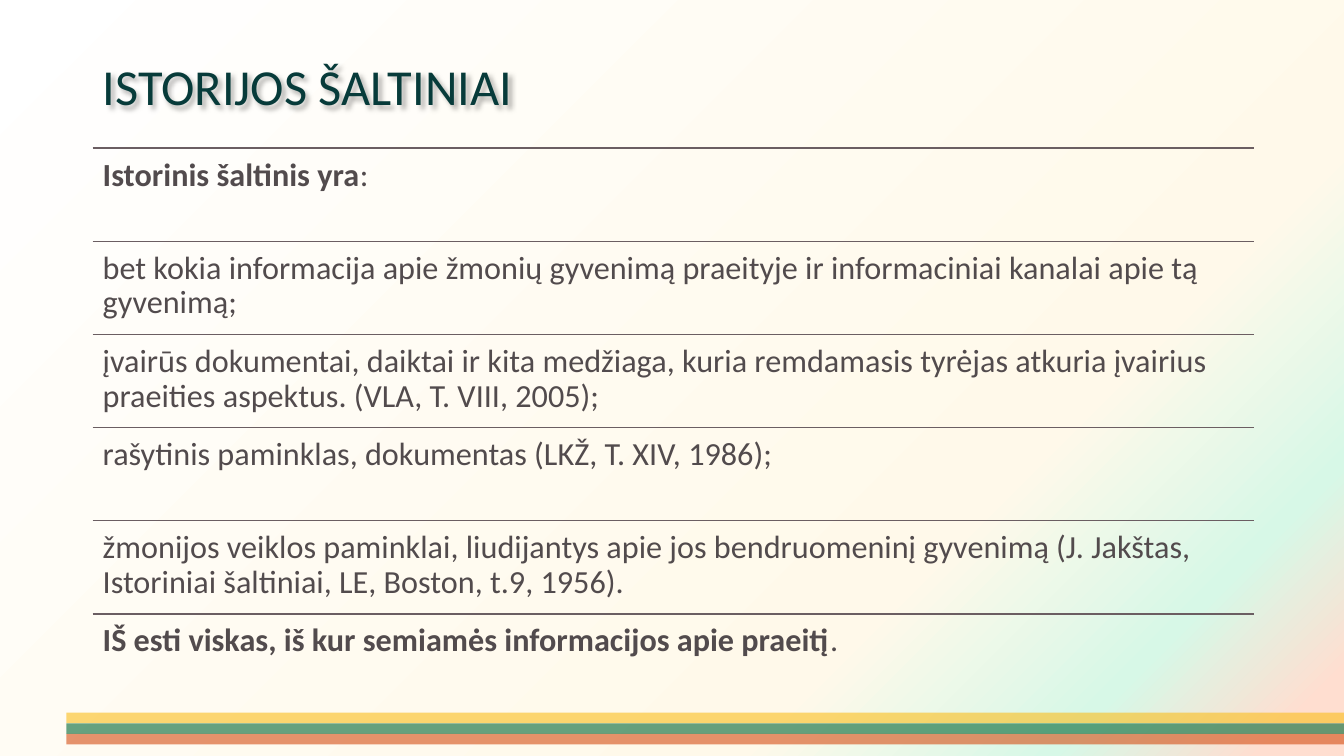
import pptx
import pptx.dml.color
import pptx.enum.shapes
import pptx.enum.text
import pptx.oxml
import pptx.oxml.ns
import pptx.util
from lxml import etree

Inches = pptx.util.Inches
Pt = pptx.util.Pt
RGBColor = pptx.dml.color.RGBColor
qn = pptx.oxml.ns.qn

TITLE_COLOR = RGBColor(0x07, 0x3B, 0x3A)
TEXT_COLOR = RGBColor(0x52, 0x4B, 0x4D)
RULE_COLOR = RGBColor(0x6B, 0x5E, 0x62)
STRIPE_COLORS = [
    RGBColor(0xFB, 0xBD, 0x1A),
    RGBColor(0x00, 0x66, 0x33),
    RGBColor(0xD5, 0x4D, 0x13),
]
BACKGROUND_STOPS = [
    (0, RGBColor(0xFF, 0xFF, 0xFF)),
    (71, RGBColor(0xFF, 0xF9, 0xEA)),
    (86, RGBColor(0xD7, 0xF8, 0xE7)),
    (96, RGBColor(0xFF, 0xDE, 0xD0)),
]

TITLE_FONT = {"name": "Calibri", "size": Pt(36)}
BODY_FONT = {"name": "Calibri", "size": Pt(23)}

LEFT = 0.92
ROW_WIDTH = 11.52
FIRST_ROW_TOP = 1.47
ROW_HEIGHT = 0.924

# Each row is a list of (text, bold) runs.
ROWS = [
    [("Istorinis šaltinis yra", True), (":", False)],
    [("bet kokia informacija apie žmonių gyvenimą praeityje ir informaciniai "
      "kanalai apie tą gyvenimą;", False)],
    [("įvairūs dokumentai, daiktai ir kita medžiaga, kuria remdamasis tyrėjas "
      "atkuria įvairius praeities aspektus. (VLA, T. VIII, 2005);", False)],
    [("rašytinis paminklas, dokumentas (LKŽ, T. XIV, 1986);", False)],
    [("žmonijos veiklos paminklai, liudijantys apie jos bendruomeninį gyvenimą "
      "(J. Jakštas, Istoriniai šaltiniai, LE, Boston, t.9, 1956).", False)],
    [("IŠ esti viskas, iš kur semiamės informacijos apie praeitį", True),
     (".", False)],
]


def paint_background(slide):
    """Fill the slide with a gradient circling out from the top left corner."""
    slide.background.fill.gradient()
    gradient = slide.element.find(".//" + qn("a:gradFill"))
    for child in list(gradient):
        gradient.remove(child)
    stops = etree.SubElement(gradient, qn("a:gsLst"))
    for percent, color in BACKGROUND_STOPS:
        stop = etree.SubElement(stops, qn("a:gs"), pos=str(percent * 1000))
        etree.SubElement(stop, qn("a:srgbClr"), val=str(color))
    circle = etree.SubElement(gradient, qn("a:path"))
    circle.set("path", "circle")
    etree.SubElement(circle, qn("a:fillToRect"), r="100000", b="100000")


def add_stripe(slide, top, color):
    stripe = slide.shapes.add_shape(
        pptx.enum.shapes.MSO_SHAPE.RECTANGLE,
        Inches(0.66), Inches(top), Inches(12.67), Inches(0.105))
    stripe.shadow.inherit = False
    stripe.line.fill.background()
    stripe.fill.solid()
    stripe.fill.fore_color.rgb = color
    color_element = stripe.fill._xPr.find(".//" + qn("a:srgbClr"))
    etree.SubElement(color_element, qn("a:alpha"), val="60000")


def add_rule(slide, top):
    rule = slide.shapes.add_connector(
        pptx.enum.shapes.MSO_CONNECTOR.STRAIGHT,
        Inches(LEFT), Inches(top), Inches(LEFT + ROW_WIDTH), Inches(top))
    rule.line.color.rgb = RULE_COLOR
    rule.line.width = Pt(1)
    etree.SubElement(rule.element.spPr, qn("a:effectLst"))


def add_text(slide, place, runs, font, color, frame_format):
    box = slide.shapes.add_textbox(*map(Inches, place))
    for name, value in frame_format.items():
        setattr(box.text_frame, name, value)
    paragraph = box.text_frame.paragraphs[0]
    paragraph.line_spacing = 0.9
    for text, bold in runs:
        run = paragraph.add_run()
        run.text = text
        run.font.bold = bold
        run.font.color.rgb = color
        for name, value in font.items():
            setattr(run.font, name, value)
    return box


def add_soft_shadow(box):
    effects = etree.SubElement(box.element.spPr, qn("a:effectLst"))
    shadow = etree.SubElement(
        effects, qn("a:outerShdw"), blurRad="38100", dist="38100",
        dir="2700000", algn="tl", rotWithShape="0")
    shade = etree.SubElement(shadow, qn("a:srgbClr"), val="000000")
    etree.SubElement(shade, qn("a:alpha"), val="30000")


def main():
    deck = pptx.Presentation()
    deck.slide_width = Inches(13.33)
    deck.slide_height = Inches(7.5)
    slide = deck.slides.add_slide(deck.slide_layouts[6])
    paint_background(slide)

    for index, color in enumerate(STRIPE_COLORS):
        add_stripe(slide, 7.07 + index * 0.105, color)

    title_frame = {
        "word_wrap": True,
        "vertical_anchor": pptx.enum.text.MSO_ANCHOR.MIDDLE,
    }
    title = add_text(slide, (LEFT, 0.4, 10.88, 0.97),
                     [("ISTORIJOS ŠALTINIAI", False)],
                     TITLE_FONT, TITLE_COLOR, title_frame)
    add_soft_shadow(title)

    row_frame = {"word_wrap": True}
    for side in ("left", "top", "right", "bottom"):
        row_frame["margin_" + side] = Inches(0.1)
    for index, runs in enumerate(ROWS):
        top = FIRST_ROW_TOP + index * ROW_HEIGHT
        add_rule(slide, top)
        add_text(slide, (LEFT, top, ROW_WIDTH, ROW_HEIGHT), runs,
                 BODY_FONT, TEXT_COLOR, row_frame)

    deck.save("out.pptx")


if __name__ == "__main__":
    main()
